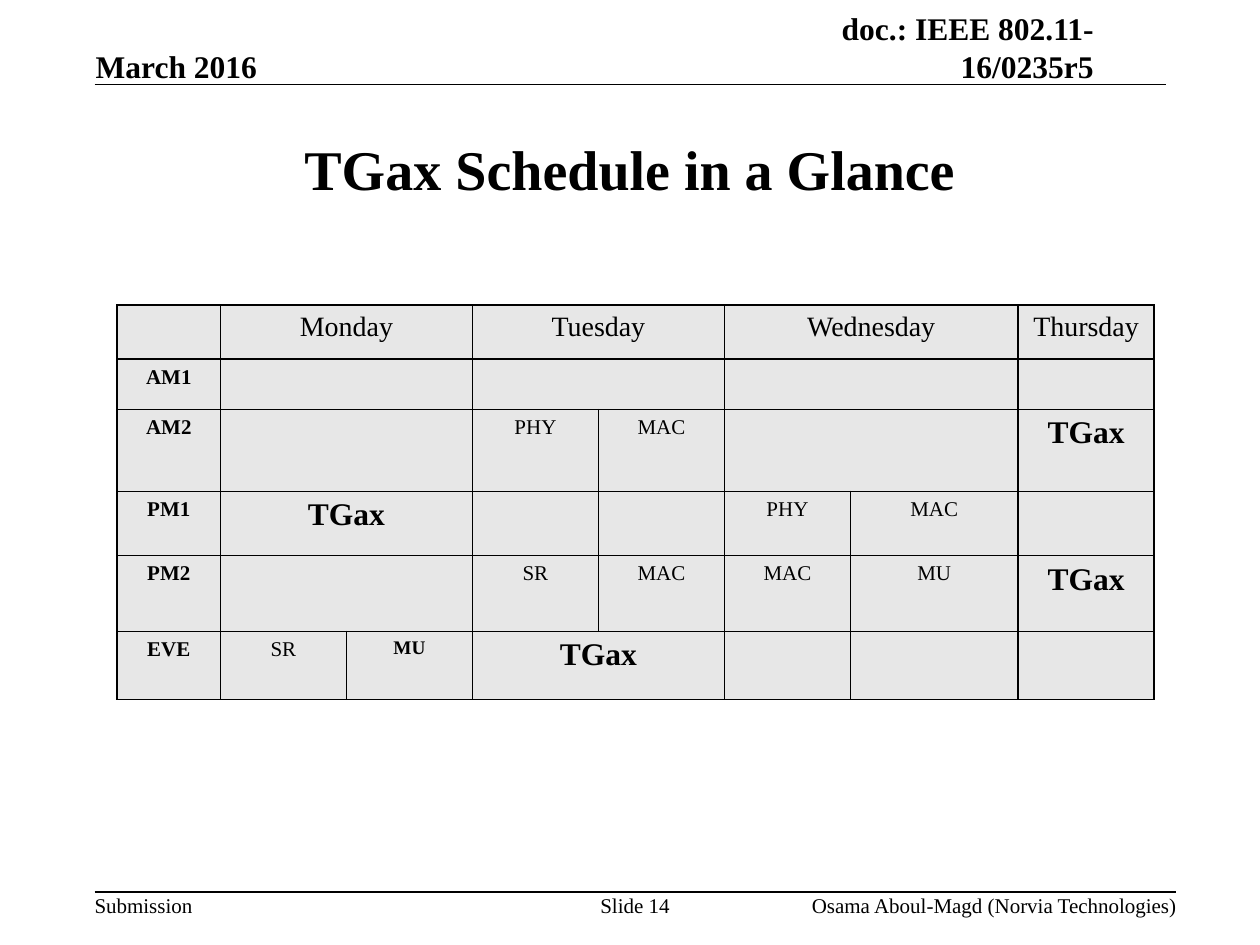
from lxml.etree import SubElement
from pptx import Presentation
from pptx.dml.color import RGBColor
from pptx.enum.shapes import MSO_CONNECTOR
from pptx.enum.text import MSO_ANCHOR as ANCHOR, MSO_AUTO_SIZE as AUTO, PP_ALIGN as ALIGN
from pptx.oxml.ns import qn
from pptx.util import Inches, Pt

FONT, BLACK, GREY = "Times New Roman", "000000", "E7E7E7"
TITLE = "TGax Schedule in a Glance"
HEADER = {"size": 18, "bold": True}
FOOTER = {"size": 12, "bold": False}
LABELS = [
    ("doc.: IEEE 802.11-16/0235r5", (5.59, 0.07, 3.09, 0.6), HEADER, ALIGN.RIGHT, ANCHOR.BOTTOM),
    ("March 2016", (0.76, 0.37, 1.29, 0.3), HEADER, ALIGN.LEFT, ANCHOR.BOTTOM),
    ("Submission", (0.75, 7.08, 0.78, 0.2), FOOTER, ALIGN.LEFT, ANCHOR.TOP),
    ("Slide 14", (4.75, 7.08, 0.58, 0.2), FOOTER, ALIGN.CENTER, ANCHOR.TOP),
    ("Osama Aboul-Magd (Norvia Technologies)", (6.34, 7.08, 3, 0.2), FOOTER, ALIGN.RIGHT, ANCHOR.TOP),
]
RULES = [(0.75, 9.25, 0.67), (0.75, 9.33, 7.08)]

COLS = [0.82, 1, 1, 1, 1, 1, 1.33, 1.08]
ROWS = [0.43, 0.4, 0.65, 0.51, 0.6, 0.54]
STYLES = {
    "day": {"size": 16, "bold": False},
    "slot": {"size": 12, "bold": True},
    "group": {"size": 12, "bold": False},
    "small": {"size": 11, "bold": True},
    "plenary": {"size": 18, "bold": True},
}
PLENARY = ("TGax", 1, "plenary")
WIDE_PLENARY = ("TGax", 2, "plenary")
EMPTY, WIDE = ("", 1, "plenary"), ("", 2, "plenary")


def group(name):
    """Return a one-column cell for an ad hoc group."""
    return name, 1, "group"


SCHEDULE = [
    [EMPTY, ("Monday", 2, "day"), ("Tuesday", 2, "day"), ("Wednesday", 2, "day"), ("Thursday", 1, "day")],
    [("AM1", 1, "slot"), WIDE, WIDE, WIDE, EMPTY],
    [("AM2", 1, "slot"), WIDE, group("PHY"), group("MAC"), WIDE, PLENARY],
    [("PM1", 1, "slot"), WIDE_PLENARY, EMPTY, EMPTY, group("PHY"), group("MAC"), EMPTY],
    [("PM2", 1, "slot"), WIDE, group("SR"), group("MAC"), group("MAC"), group("MU"), PLENARY],
    [("EVE", 1, "slot"), group("SR"), ("MU", 1, "small"), WIDE_PLENARY, EMPTY, EMPTY, EMPTY],
]


def color(target, value):
    """Set a colour format from a hex string."""
    target.rgb = RGBColor.from_string(value)


def write(tf, text, style, align):
    """Write one formatted paragraph and return it."""
    p = tf.paragraphs[0]
    p.alignment = align
    font = p.font
    if text:
        r = p.add_run()
        r.text = text
        font = r.font
    for name, value in {**style, "name": FONT, "size": Pt(style["size"])}.items():
        setattr(font, name, value)
    color(font.color, BLACK)
    return p


def set_frame(tf, **values):
    """Set text frame attributes."""
    for name, value in values.items():
        setattr(tf, name, value)


def add_label(s, text, box, style, align, anchor):
    """Add a header or footer label; the document number is indented and wraps."""
    tf = s.shapes.add_textbox(*map(Inches, box)).text_frame
    wraps = text.startswith("doc.")
    set_frame(tf, margin_left=0, margin_right=0, margin_top=0, margin_bottom=0,
              vertical_anchor=anchor, word_wrap=wraps,
              auto_size=AUTO.NONE if wraps else AUTO.SHAPE_TO_FIT_TEXT)
    p = write(tf, text, style, align)
    if wraps:
        p._p.get_or_add_pPr().set("marL", str(Inches(0.5)))


def add_rule(s, left, right, y):
    """Add a thin horizontal rule."""
    line = s.shapes.add_connector(MSO_CONNECTOR.STRAIGHT, *map(Inches, (left, y, right, y)))
    line.line.width = Pt(1)
    color(line.line.color, BLACK)
    SubElement(line._element.spPr, qn("a:effectLst"))


def format_cell(cell):
    """Give a cell its borders and fill."""
    tc_pr = cell._tc.get_or_add_tcPr()
    for side in ("a:lnL", "a:lnR", "a:lnT", "a:lnB"):
        ln = SubElement(tc_pr, qn(side), w=str(Pt(1)))
        SubElement(SubElement(ln, qn("a:solidFill")), qn("a:srgbClr"), val=BLACK)
    cell.fill.solid()
    color(cell.fill.fore_color, GREY)


def add_schedule(s):
    """Add the meeting schedule table."""
    box = map(Inches, (0.93, 2.42, sum(COLS), sum(ROWS)))
    table = s.shapes.add_table(len(ROWS), len(COLS), *box).table
    for column, width in zip(table.columns, COLS):
        column.width = Inches(width)
    for row, height in zip(table.rows, ROWS):
        row.height = Inches(height)
    for cell in table.iter_cells():
        format_cell(cell)
    for i, entries in enumerate(SCHEDULE):
        j = 0
        for text, span, style in entries:
            cell = table.cell(i, j)
            if span > 1:
                cell.merge(table.cell(i, j + span - 1))
            write(cell.text_frame, text, STYLES[style], ALIGN.CENTER)
            j += span


def main():
    """Build the schedule slide."""
    prs = Presentation()
    prs.slide_width, prs.slide_height = Inches(10), Inches(7.5)
    s = prs.slides.add_slide(prs.slide_layouts[5])
    title = s.shapes.title
    title.left, title.top, title.width, title.height = map(Inches, (0.75, 0.75, 8.5, 1.17))
    set_frame(title.text_frame, vertical_anchor=ANCHOR.MIDDLE, word_wrap=True, auto_size=AUTO.NONE)
    write(title.text_frame, TITLE, {"size": 32, "bold": True}, ALIGN.CENTER)
    for rule in RULES:
        add_rule(s, *rule)
    for label in LABELS:
        add_label(s, *label)
    add_schedule(s)
    prs.save("out.pptx")


if __name__ == "__main__":
    main()
